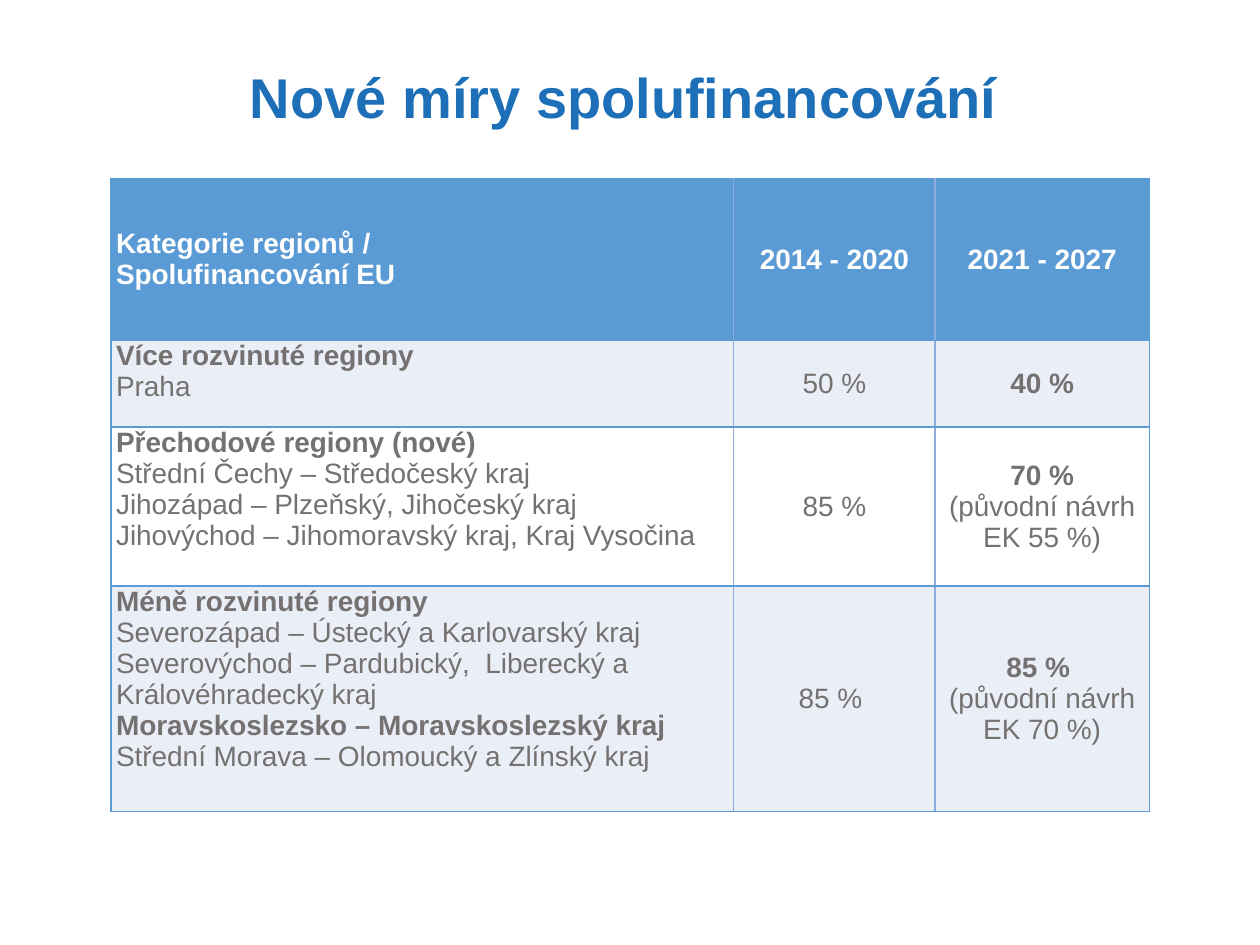
from copy import deepcopy
from dataclasses import dataclass

from pptx import Presentation
from pptx import util as u
from pptx.dml.color import RGBColor
from pptx.enum import text
from pptx.oxml import parse_xml
from pptx.oxml.ns import nsdecls, qn

COLORS = {
    "title": "1D70B8",
    "accent": "5B9BD5",
    "divider": "8FAADC",
    "band": "EAEFF7",
    "plain": "FFFFFF",
    "body": "767171",
}
LEFT, CENTER = text.PP_ALIGN.LEFT, text.PP_ALIGN.CENTER
TOP, MIDDLE = text.MSO_ANCHOR.TOP, text.MSO_ANCHOR.MIDDLE


@dataclass
class Span:
    text: str
    bold: bool = False


@dataclass
class Row:
    height: float
    fill: str
    color: str
    anchor: text.MSO_ANCHOR
    cells: list[list[list[Span]]]


def lines(*items: str, bold: int = 1) -> list[list[Span]]:
    return [[Span(item, index < bold)] for index, item in enumerate(items)]


COLUMN_WIDTHS = (12.55, 4.06, 4.32)
ROWS = [
    Row(3.25, "accent", "plain", MIDDLE, [
        lines("Kategorie regionů /", "Spolufinancování EU", bold=2),
        lines("2014 - 2020"),
        lines("2021 - 2027"),
    ]),
    Row(1.75, "band", "body", TOP, [
        lines("Více rozvinuté regiony", "Praha"),
        lines("50 %", bold=0),
        lines("40 %"),
    ]),
    Row(3.2, "plain", "body", TOP, [
        lines(
            "Přechodové regiony (nové)",
            "Střední Čechy – Středočeský kraj",
            "Jihozápad – Plzeňský, Jihočeský kraj",
            "Jihovýchod – Jihomoravský kraj, Kraj Vysočina",
        ),
        lines("85 %", bold=0),
        lines("70 %", "(původní návrh EK 55 %)"),
    ]),
    Row(4.55, "band", "body", TOP, [
        [
            [Span("Méně rozvinuté regiony", True)],
            [Span("Severozápad – Ústecký a Karlovarský kraj")],
            [
                Span("Severovýchod – Pardubický,  Liberecký a Královéhradecký kraj"),
                Span("Moravskoslezsko – Moravskoslezský kraj", True),
            ],
            [Span("Střední Morava – Olomoucký a Zlínský kraj")],
        ],
        lines("85 % ", bold=0),
        lines("85 % ", "(původní návrh EK 70 %)"),
    ]),
]


def apply(target, values: dict) -> None:
    for name, value in values.items():
        setattr(target, name, value)


def add_span(para, content: Span, size: float, color: str):
    span = para.add_run()
    span.text = content.text
    apply(span.font, {"name": "Arial", "size": u.Pt(size), "bold": content.bold})
    span.font.color.rgb = RGBColor.from_string(COLORS[color])
    return span


def add_borders(cell, sides: dict[str, str]) -> None:
    properties = cell._tc.get_or_add_tcPr()
    for side, color in sides.items():
        properties.append(parse_xml(
            f'<a:ln{side} {nsdecls("a")} w="{u.Pt(1)}"><a:solidFill>'
            f'<a:srgbClr val="{COLORS[color]}"/></a:solidFill></a:ln{side}>'
        ))


def fill_cell(cell, row: Row, column: int) -> None:
    last = len(COLUMN_WIDTHS) - 1
    add_borders(cell, {
        "L": "divider" if column else "accent",
        "R": "divider" if column < last else "accent",
        "T": "accent",
        "B": "accent",
    })
    apply(cell, {
        "margin_left": u.Cm(0.1),
        "margin_right": u.Cm(0.1),
        "margin_top": 0,
        "margin_bottom": 0,
        "vertical_anchor": MIDDLE if column else row.anchor,
    })
    cell.fill.solid()
    cell.fill.fore_color.rgb = RGBColor.from_string(COLORS[row.fill])
    frame = cell.text_frame
    for index, spans in enumerate(row.cells[column]):
        para = frame.add_paragraph() if index else frame.paragraphs[0]
        para.alignment = CENTER if column else LEFT
        for position, content in enumerate(spans):
            if position:
                para.add_line_break()
                line_break = para._p.findall(qn("a:br"))[-1]
                line_break.append(deepcopy(para.runs[-1]._r.rPr))
            add_span(para, content, 16, row.color)


def add_title(page) -> None:
    title = page.shapes.title
    apply(title, {
        "left": u.Cm(1.68),
        "top": u.Cm(0.74),
        "width": u.Cm(21.79),
        "height": u.Cm(2.57),
    })
    apply(title.text_frame, {"word_wrap": True, "vertical_anchor": MIDDLE})
    para = title.text_frame.paragraphs[0]
    apply(para, {"alignment": CENTER, "line_spacing": 0.9})
    add_span(para, Span("Nové míry spolufinancování", True), 32, "title")


def add_rates_table(page) -> None:
    table = page.shapes.add_table(
        len(ROWS), len(COLUMN_WIDTHS), u.Cm(2.24), u.Cm(3.61),
        u.Cm(sum(COLUMN_WIDTHS)), u.Cm(sum(row.height for row in ROWS)),
    ).table
    apply(table, {"first_row": False, "horz_banding": False})
    for column, width in zip(table.columns, COLUMN_WIDTHS):
        column.width = u.Cm(width)
    for index, row in enumerate(ROWS):
        table.rows[index].height = u.Cm(row.height)
        for column in range(len(COLUMN_WIDTHS)):
            fill_cell(table.cell(index, column), row, column)


def main() -> None:
    deck = Presentation()
    apply(deck, {"slide_width": u.Cm(25.4), "slide_height": u.Cm(19.05)})
    page = deck.slides.add_slide(deck.slide_layouts.get_by_name("Title Only"))
    add_title(page)
    add_rates_table(page)
    deck.save("out.pptx")


if __name__ == "__main__":
    main()
